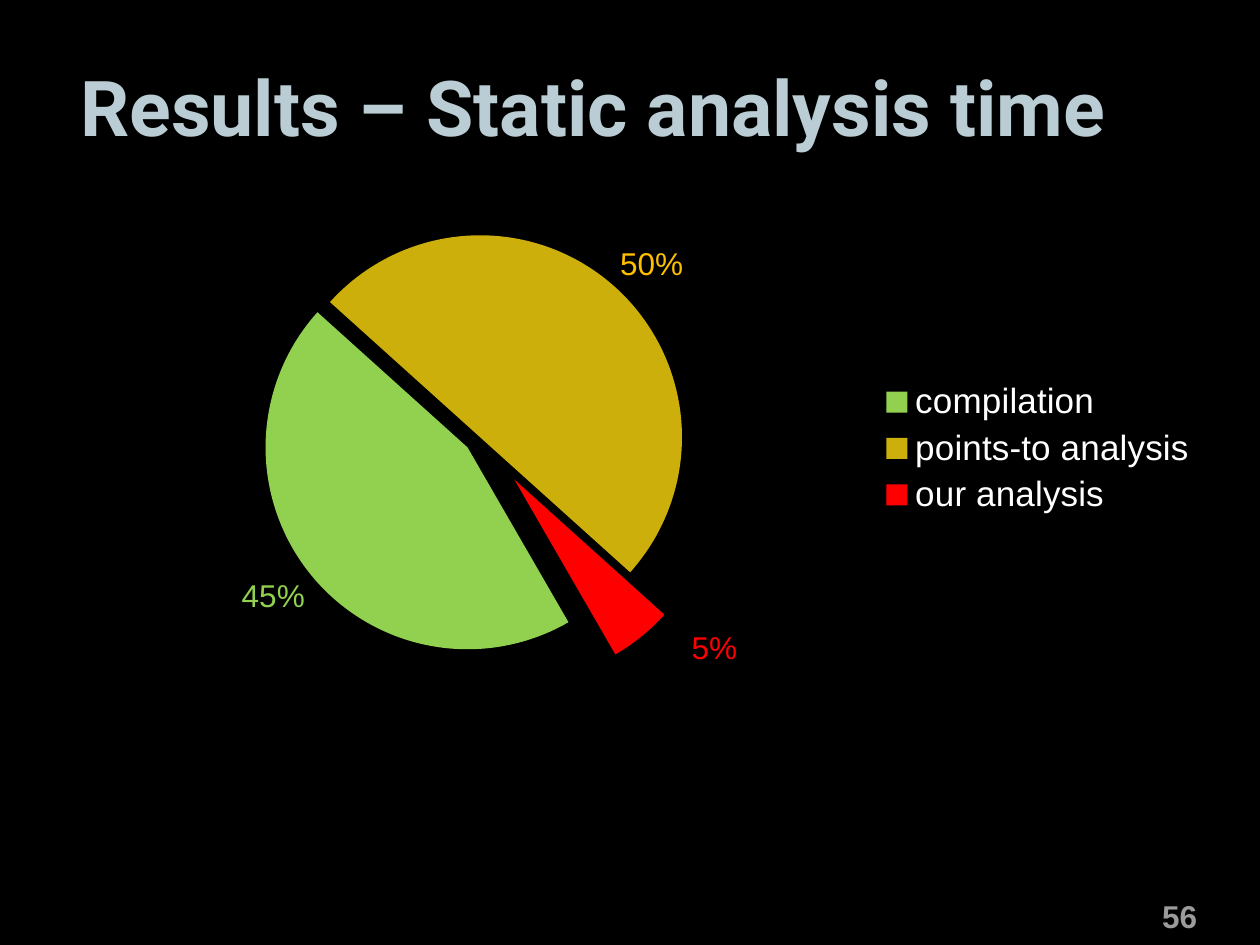
from lxml import etree
from pptx import Presentation
from pptx.chart.data import CategoryChartData
from pptx.dml.color import RGBColor
from pptx.enum.chart import XL_CHART_TYPE, XL_LABEL_POSITION, XL_LEGEND_POSITION
from pptx.enum.text import MSO_ANCHOR, PP_ALIGN
from pptx.oxml.ns import qn
from pptx.util import Pt

PIE = XL_CHART_TYPE.PIE
OUTSIDE = XL_LABEL_POSITION.OUTSIDE_END
LEGEND_RIGHT = XL_LEGEND_POSITION.RIGHT
TOP, BOTTOM = MSO_ANCHOR.TOP, MSO_ANCHOR.BOTTOM
LEFT, RIGHT = PP_ALIGN.LEFT, PP_ALIGN.RIGHT

PX = 914400 // 126
BLACK = RGBColor(0x00, 0x00, 0x00)
WHITE = RGBColor(0xFF, 0xFF, 0xFF)
PALE_BLUE = RGBColor(0xBA, 0xCD, 0xD4)
GRAY = RGBColor(0x9D, 0x9B, 0x9A)
GREEN = RGBColor(0x92, 0xD0, 0x50)
GOLD = RGBColor(0xCC, 0xAF, 0x0A)
AMBER = RGBColor(0xFF, 0xC0, 0x00)
RED = RGBColor(0xFF, 0x00, 0x00)

SLICES = [
    ("compilation", 45, GREEN, GREEN, 8, None),
    ("points-to analysis", 50, GOLD, AMBER, 0, None),
    ("our analysis", 5, RED, RED, 27, {"x": 0.04, "y": -0.02}),
]
PLOT_LAYOUT = {"layoutTarget": "inner", "xMode": "edge", "yMode": "edge",
               "x": 0.18, "y": 0.12, "w": 0.36, "h": 0.72}


def px(*lengths):
    return [n * PX for n in lengths]


def set_font(font, color, **values):
    for name, value in values.items():
        setattr(font, name, value)
    font.color.rgb = color


def add_text(slide, box, text, color, inset=True, anchor=TOP, align=LEFT, **font):
    tf = slide.shapes.add_textbox(*px(*box)).text_frame
    tf.word_wrap = True
    tf.vertical_anchor = anchor
    if not inset:
        for side in ("left", "top", "right", "bottom"):
            setattr(tf, f"margin_{side}", 0)
    p = tf.paragraphs[0]
    p.alignment = align
    r = p.add_run()
    r.text = text
    set_font(r.font, color, bold=True, **font)


def set_layout(parent, index, settings):
    for old in parent.findall(qn("c:layout")):
        parent.remove(old)
    layout = etree.Element(qn("c:layout"))
    manual = etree.SubElement(layout, qn("c:manualLayout"))
    for name, value in settings.items():
        etree.SubElement(manual, qn(f"c:{name}"), val=str(value))
    parent.insert(index, layout)


def explode(series, index, percent):
    dpt = next(d for d in series._element.findall(qn("c:dPt"))
               if d.find(qn("c:idx")).get("val") == str(index))
    explosion = etree.Element(qn("c:explosion"), val=str(percent))
    dpt.find(qn("c:spPr")).addprevious(explosion)


def format_slice(series, index, fill, label_color, offset, label_shift):
    point = series.points[index]
    point.format.fill.solid()
    point.format.fill.fore_color.rgb = fill
    point.format.line.fill.background()
    explode(series, index, offset)
    label = point.data_label
    set_font(label.font, label_color, name="Arial", size=Pt(18))
    label.position = OUTSIDE
    d_lbl = label._dLbl
    for tag, shown in (("c:showVal", "0"), ("c:showPercent", "1")):
        d_lbl.find(qn(tag)).set("val", shown)
    if label_shift:
        set_layout(d_lbl, 1, label_shift)


def add_pie(slide, box):
    data = CategoryChartData()
    data.categories = [name for name, *_ in SLICES]
    data.add_series("Series 1", [value for _, value, *_ in SLICES])
    chart = slide.shapes.add_chart(PIE, *px(*box), data).chart
    chart.has_title = False
    set_font(chart.font, WHITE, name="Arial", size=Pt(18))
    chart.has_legend = True
    chart.legend.position = LEGEND_RIGHT
    chart.legend.include_in_layout = False
    set_font(chart.legend.font, WHITE, name="Arial", size=Pt(20))
    plot = chart.plots[0]
    plot.vary_by_categories = True
    series = plot.series[0]
    label_values = {"show_percentage": True, "show_value": False,
                    "number_format": "0%", "number_format_is_linked": False,
                    "position": OUTSIDE}
    for name, value in label_values.items():
        setattr(series.data_labels, name, value)
    for i, (_, _, *style) in enumerate(SLICES):
        format_slice(series, i, *style)
    angle = plot._element.find(qn("c:firstSliceAng"))
    if angle is None:
        angle = etree.SubElement(plot._element, qn("c:firstSliceAng"))
    angle.set("val", "150")
    set_layout(chart._chartSpace.chart.plotArea, 0, PLOT_LAYOUT)


def main():
    prs = Presentation()
    prs.slide_width, prs.slide_height = px(1260, 945)
    slide = prs.slides.add_slide(prs.slide_layouts[6])
    slide.background.fill.solid()
    slide.background.fill.fore_color.rgb = BLACK
    add_text(slide, (1092, 885, 105, 50), "56", GRAY, inset=False,
             anchor=BOTTOM, align=RIGHT, name="Arial", size=Pt(18))
    add_text(slide, (68, 53, 1131, 106), "Results – Static analysis time",
             PALE_BLUE, name="Roboto", size=Pt(44))
    add_pie(slide, (69, 168, 1142, 561))
    prs.save("out.pptx")


if __name__ == "__main__":
    main()
